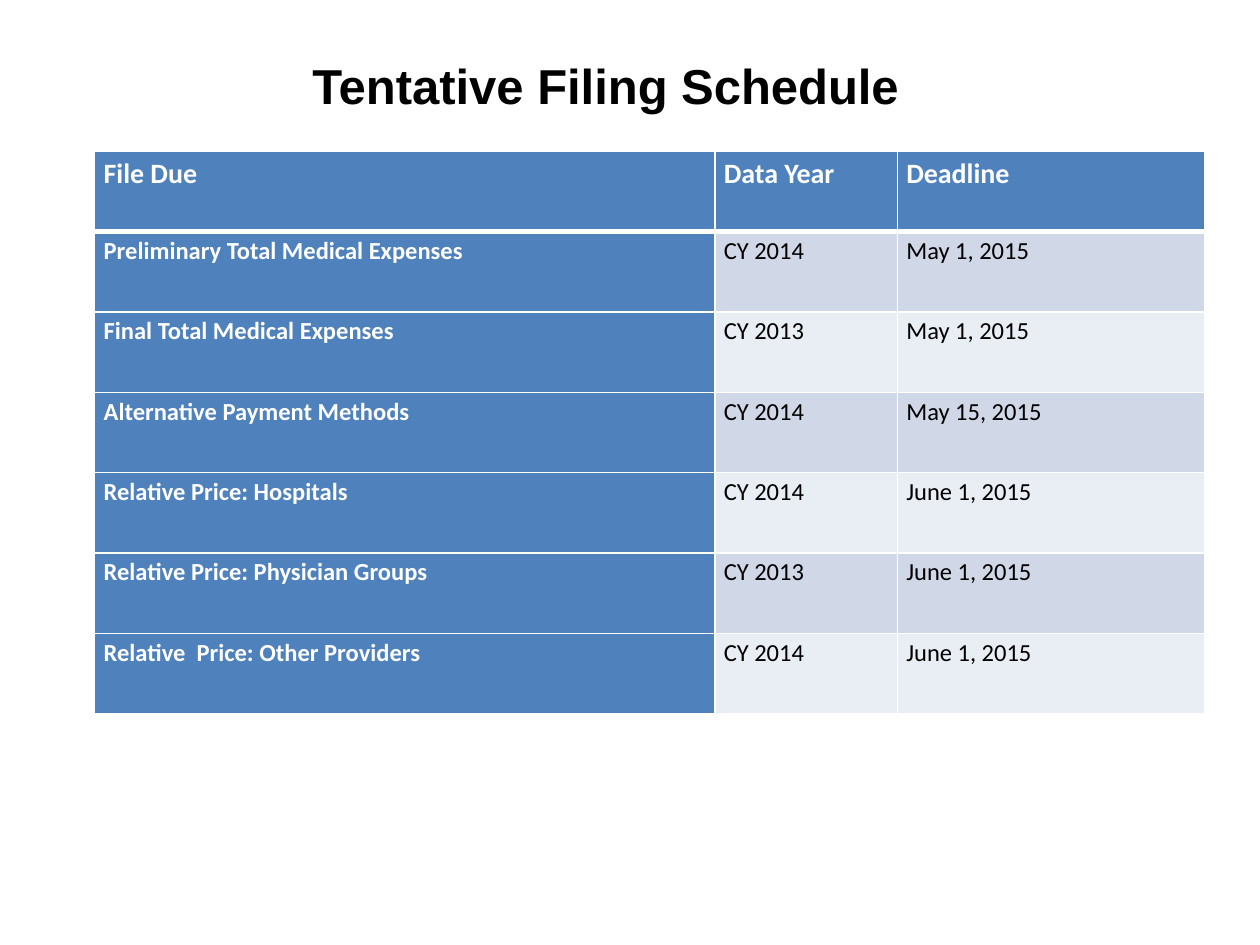
"""Build the tentative filing schedule slide."""
from lxml import etree
from pptx import Presentation
from pptx.dml.color import RGBColor
from pptx.enum.text import MSO_ANCHOR, PP_ALIGN
from pptx.oxml.ns import qn
from pptx.util import Cm, Pt

CENTER = PP_ALIGN.CENTER
MIDDLE = MSO_ANCHOR.MIDDLE
BLACK = RGBColor(0x00, 0x00, 0x00)
WHITE = RGBColor(0xFF, 0xFF, 0xFF)
BLUE = RGBColor(0x4F, 0x81, 0xBD)
BANDS = (RGBColor(0xD0, 0xD8, 0xE8), RGBColor(0xE9, 0xED, 0xF4))

COL_WIDTHS = (12.5, 3.68, 6.2)
ROW_HEIGHT = 1.62
ROWS = (
    ("File Due", "Data Year", "Deadline"),
    ("Preliminary Total Medical Expenses", "CY 2014", "May 1, 2015"),
    ("Final Total Medical Expenses", "CY 2013", "May 1, 2015"),
    ("Alternative Payment Methods", "CY 2014", "May 15, 2015"),
    ("Relative Price: Hospitals", "CY 2014", "June 1, 2015"),
    ("Relative Price: Physician Groups", "CY 2013", "June 1, 2015"),
    ("Relative  Price: Other Providers", "CY 2014", "June 1, 2015"),
)


class Deck:
    def __init__(self, prs):
        self.s = prs.slides.add_slide(prs.slide_layouts[6])
        self.title_font = "Arial"
        self.body_font = "Calibri"

    def style(self, p, name, size, color, bold):
        p.font.name = name
        p.font.size = Pt(size)
        p.font.color.rgb = color
        p.font.bold = bold

    def title(self, text, x, y, w, h):
        sp = self.s.shapes.add_textbox(Cm(x), Cm(y), Cm(w), Cm(h))
        tf = sp.text_frame
        tf.word_wrap = True
        tf.vertical_anchor = MIDDLE
        p = tf.paragraphs[0]
        p.text = text
        p.alignment = CENTER
        self.style(p, self.title_font, 28, BLACK, True)

    def border(self, cell, side, width):
        tcPr = cell._tc.get_or_add_tcPr()
        ln = etree.SubElement(tcPr, qn(f"a:ln{side}"), w=str(Pt(width)))
        fill = etree.SubElement(ln, qn("a:solidFill"))
        etree.SubElement(fill, qn("a:srgbClr"), val=str(WHITE))

    def cell(self, cell, text, row, col):
        strong = row == 0 or col == 0
        cell.margin_left = cell.margin_right = Cm(0.18)
        cell.margin_top = cell.margin_bottom = 0
        for side in "LRTB":
            under_header = (row, side) in ((0, "B"), (1, "T"))
            self.border(cell, side, 3 if under_header else 1)
        cell.fill.solid()
        cell.fill.fore_color.rgb = BLUE if strong else BANDS[(row - 1) % 2]
        p = cell.text_frame.paragraphs[0]
        p.text = text
        p.line_spacing = 1.15
        p.space_after = Pt(10)
        self.style(p, self.body_font, 14 if row else 16, WHITE if strong else BLACK, strong)

    def table(self, rows, x, y, widths, row_height):
        frame = self.s.shapes.add_table(
            len(rows), len(widths), Cm(x), Cm(y), Cm(sum(widths)), Cm(row_height * len(rows)))
        table = frame.table
        for column, width in zip(table.columns, widths):
            column.width = Cm(width)
        for i, texts in enumerate(rows):
            table.rows[i].height = Cm(row_height)
            for j, text in enumerate(texts):
                self.cell(table.cell(i, j), text, i, j)


def main():
    prs = Presentation()
    prs.slide_width, prs.slide_height = Cm(25.4), Cm(19.05)
    deck = Deck(prs)
    deck.title("Tentative Filing Schedule", 0.36, 0.38, 23.7, 2.67)
    deck.table(ROWS, 1.91, 3.05, COL_WIDTHS, ROW_HEIGHT)
    prs.save("out.pptx")


if __name__ == "__main__":
    main()
